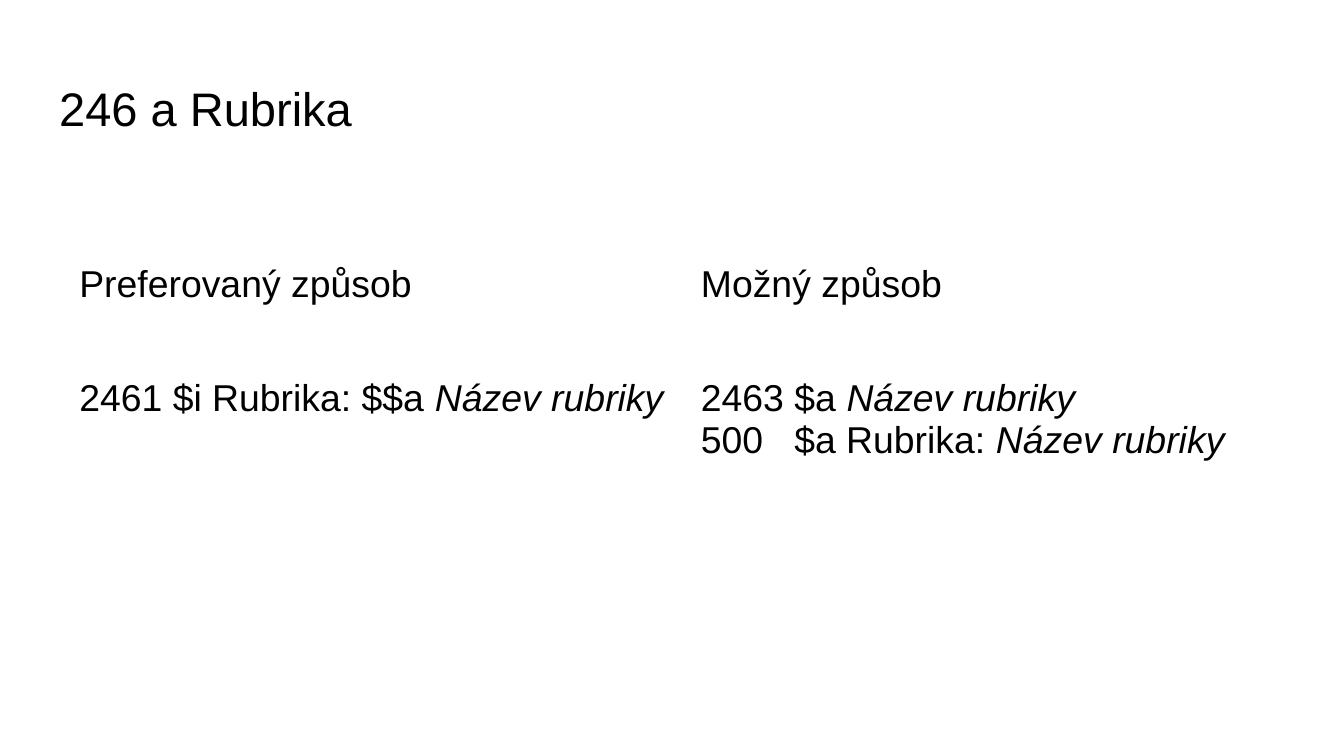
from lxml.etree import SubElement
from pptx import Presentation
from pptx.dml.color import RGBColor
from pptx.enum.text import MSO_ANCHOR, PP_ALIGN
from pptx.oxml.ns import qn
from pptx.util import Pt

PX = 4572
BLACK = "000000"
WHITE = "FFFFFF"
CELLS = [
    [[[("Preferovaný způsob", False)]],
     [[("Možný způsob", False)]]],
    [[[("2461 $i Rubrika: $$a ", False), ("Název rubriky", True)]],
     [[("2463 $a ", False), ("Název rubriky", True)],
      [("500\t$a Rubrika: ", False), ("Název rubriky", True)]]],
]


def px(n):
    """Turn px into EMU."""
    return n * PX


def rgb(value):
    """Turn a hex string into a colour."""
    return RGBColor.from_string(value)


def set_margins(obj):
    """Give a cell or text frame equal insets."""
    obj.margin_left = obj.margin_right = px(20)
    obj.margin_top = obj.margin_bottom = px(20)


def add_run(p, text, size, italic=False):
    """Append a formatted run to a paragraph."""
    r = p.add_run()
    r.text = text
    r.font.name = "Arial"
    r.font.size = Pt(size)
    r.font.bold = False
    r.font.italic = italic
    r.font.color.rgb = rgb(BLACK)


def add_tab_stop(p, pos):
    """Set a left tab stop in a paragraph."""
    tabs = SubElement(p._p.get_or_add_pPr(), qn("a:tabLst"))
    SubElement(tabs, qn("a:tab"), pos=str(px(pos)), algn="l")


def set_borders(cell, color, width):
    """Draw the four borders of a cell."""
    tcPr = cell._tc.get_or_add_tcPr()
    for i, side in enumerate(("a:lnL", "a:lnR", "a:lnT", "a:lnB")):
        ln = tcPr.makeelement(qn(side), {"w": str(Pt(width))})
        fill = SubElement(ln, qn("a:solidFill"))
        SubElement(fill, qn("a:srgbClr"), val=color)
        tcPr.insert(i, ln)


def fill_cell(cell, paragraphs):
    """Write and format one table cell."""
    set_margins(cell)
    cell.vertical_anchor = MSO_ANCHOR.TOP
    cell.fill.background()
    set_borders(cell, WHITE, 0.75)
    tf = cell.text_frame
    for i, runs in enumerate(paragraphs):
        p = tf.add_paragraph() if i else tf.paragraphs[0]
        if any("\t" in text for text, _ in runs):
            add_tab_stop(p, 139)
        for text, italic in runs:
            add_run(p, text, 20, italic)


def build_title(s, x, y, w, h):
    """Place the slide title in its box."""
    sp = s.shapes.title
    sp.left, sp.top, sp.width, sp.height = px(x), px(y), px(w), px(h)
    tf = sp.text_frame
    set_margins(tf)
    tf.word_wrap = True
    tf.vertical_anchor = MSO_ANCHOR.MIDDLE
    p = tf.paragraphs[0]
    p.alignment = PP_ALIGN.LEFT
    add_run(p, "246 a Rubrika", 25.2)


def build_table(s, x, y, size, column_width, heights):
    """Place the comparison table with equal columns in a square frame."""
    frame = s.shapes.add_table(len(CELLS), len(CELLS[0]), px(x), px(y), px(size), px(size))
    table = frame.table
    table.first_row = table.horz_banding = False
    for column in table.columns:
        column.width = px(column_width)
    for row, height, contents in zip(table.rows, heights, CELLS):
        row.height = px(height)
        for cell, paragraphs in zip(row.cells, contents):
            fill_cell(cell, paragraphs)
    frame.width = frame.height = px(size)


def main():
    """Build and save the slide."""
    prs = Presentation()
    prs.slide_width, prs.slide_height = px(2000), px(1125)
    s = prs.slides.add_slide(prs.slide_layouts[5])
    s.background.fill.solid()
    s.background.fill.fore_color.rgb = rgb(WHITE)
    build_title(s, 68, 98, 1864, 126)
    build_table(s, 98, 372, 656, 925, (170, 352))
    prs.save("out.pptx")


if __name__ == "__main__":
    main()
